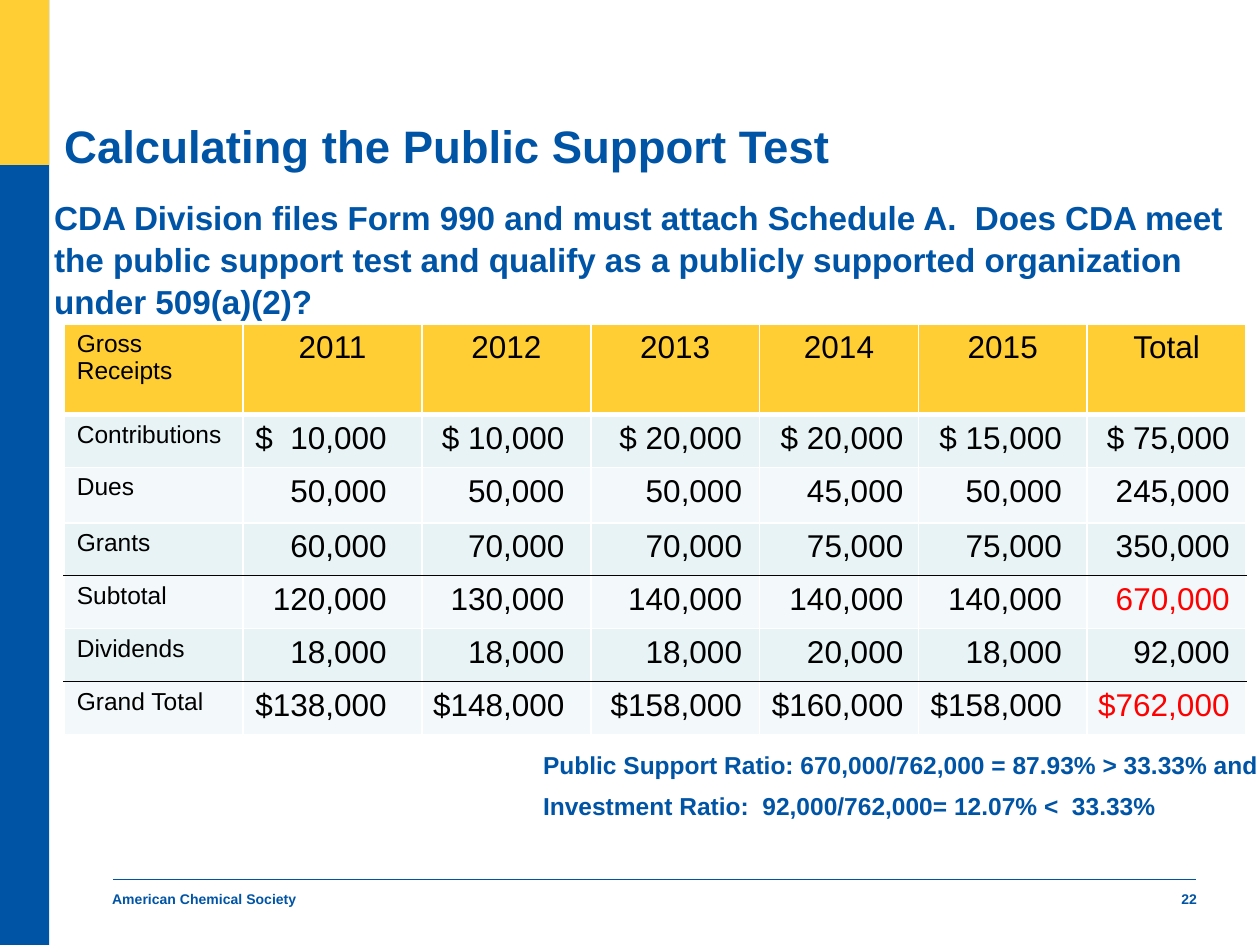
from lxml import etree
from pptx import Presentation
from pptx.dml.color import RGBColor
from pptx.enum import shapes, text
from pptx.oxml.ns import qn
from pptx.util import Inches, Pt

COLORS = {"blue": "0054A6", "gold": "FFCE34", "white": "FFFFFF", "black": "000000",
          "red": "FF0000", "band": "E7F3F4", "light": "F3F9FA"}
TITLE = "Calculating the Public Support Test"
QUESTION = ("CDA Division files Form 990 and must attach Schedule A.  Does CDA meet the public "
            "support test and qualify as a publicly supported organization under 509(a)(2)?")
RATIOS = ["Public Support Ratio: 670,000/762,000 = 87.93% > 33.33% and",
          "Investment Ratio:  92,000/762,000= 12.07% <  33.33%"]
ROWS = [
    ["Gross Receipts", "2011", "2012", "2013", "2014", "2015", "Total"],
    ["Contributions", "$  10,000", "$ 10,000", "$ 20,000", "$ 20,000", "$ 15,000", "$ 75,000"],
    ["Dues", "50,000", "50,000", "50,000", "45,000", "50,000", "245,000"],
    ["Grants", "60,000", "70,000", "70,000", "75,000", "75,000", "350,000"],
    ["Subtotal", "120,000", "130,000", "140,000", "140,000", "140,000", "670,000"],
    ["Dividends", "18,000", "18,000", "18,000", "20,000", "18,000", "92,000"],
    ["Grand Total", "$138,000", "$148,000", "$158,000", "$160,000", "$158,000", "$762,000"],
]
COL_WIDTHS = [1.42, 1.42, 1.34, 1.34, 1.26, 1.34, 1.26]
ROW_HEIGHTS = [0.72, 0.42, 0.44, 0.42, 0.42, 0.42, 0.42]
RIGHT_MARGINS = [0.1, 0.28, 0.21, 0.14, 0.12, 0.2, 0.13]
RULED_ROWS = {3, 5}
RED_CELLS = {(4, 6), (6, 6)}
BARS = [("blue", 7.5), ("gold", 1.31)]
FOOTERS = [("American Chemical Society", 0.89, 3.17, text.PP_ALIGN.LEFT),
           ("22", 7.56, 1.94, text.PP_ALIGN.RIGHT)]


def rgb(name):
    return RGBColor.from_string(COLORS[name])


def set_all(target, values):
    for name, value in values.items():
        setattr(target, name, value)


def write(p, words, size, color="blue", bold=True, **layout):
    r = p.add_run()
    r.text = words
    set_all(r.font, {"name": "Arial", "size": Pt(size), "bold": bold})
    r.font.color.rgb = rgb(color)
    set_all(p, layout)


def place(sp, left, top, width, height):
    set_all(sp, {"left": Inches(left), "top": Inches(top),
                 "width": Inches(width), "height": Inches(height)})
    tf = sp.text_frame
    set_all(tf, {"margin_left": 0, "margin_top": 0, "margin_right": 0, "margin_bottom": 0,
                 "word_wrap": True, "auto_size": text.MSO_AUTO_SIZE.NONE,
                 "vertical_anchor": text.MSO_ANCHOR.TOP})
    return tf


def plain_list(p, indent):
    pPr = p._p.get_or_add_pPr()
    pPr.set("marL", str(Inches(indent)))
    pPr.set("indent", "0")
    etree.SubElement(pPr, qn("a:buNone"))


def set_border(cell, sides):
    tcPr = cell._tc.get_or_add_tcPr()
    for i, (side, (color, width)) in enumerate(sides.items()):
        ln = etree.Element(qn("a:ln" + side), w=str(Pt(width)))
        fill = etree.SubElement(ln, qn("a:solidFill"))
        etree.SubElement(fill, qn("a:srgbClr"), val=COLORS[color])
        tcPr.insert(i, ln)


def bottom_line(row):
    if row == 0:
        return "white", 3
    return ("black" if row in RULED_ROWS else "white"), 1


def add_frame(s):
    for color, height in BARS:
        sp = s.shapes.add_shape(shapes.MSO_SHAPE.RECTANGLE, 0, 0, Inches(0.39), Inches(height))
        sp.shadow.inherit = False
        sp.fill.solid()
        sp.fill.fore_color.rgb = rgb(color)
        sp.line.fill.background()
    rule = s.shapes.add_connector(shapes.MSO_CONNECTOR.STRAIGHT, Inches(0.9), Inches(6.98),
                                  Inches(9.49), Inches(6.98))
    rule.line.color.rgb = rgb("blue")
    rule.line.width = Pt(0.75)
    etree.SubElement(rule._element.spPr, qn("a:effectLst"))
    for words, left, width, align in FOOTERS:
        tf = place(s.shapes.add_textbox(0, 0, 0, 0), left, 7.07, width, 0.31)
        write(tf.paragraphs[0], words, 8, alignment=align)


def add_copy(s):
    tf = place(s.shapes.title, 0.51, 0.35, 6.53, 1.03)
    tf.vertical_anchor = text.MSO_ANCHOR.BOTTOM
    write(tf.paragraphs[0], TITLE, 26, alignment=text.PP_ALIGN.LEFT, line_spacing=0.9)

    tf = place(s.placeholders[1], 0.43, 1.55, 9.57, 5.28)
    p = tf.paragraphs[0]
    plain_list(p, 0)
    write(p, QUESTION, 19, line_spacing=1.05, space_before=Pt(0), space_after=Pt(0))
    for words, gap in zip(RATIOS, (245, 7)):
        p = tf.add_paragraph()
        plain_list(p, 3.88)
        write(p, words, 14, space_before=Pt(gap), space_after=Pt(0))


def add_receipts(s):
    table = s.shapes.add_table(len(ROWS), len(COL_WIDTHS), Inches(0.51), Inches(2.57),
                               Inches(sum(COL_WIDTHS)), Inches(sum(ROW_HEIGHTS))).table
    for col, width in zip(table.columns, COL_WIDTHS):
        col.width = Inches(width)
    for row, height in zip(table.rows, ROW_HEIGHTS):
        row.height = Inches(height)
    for i, row in enumerate(ROWS):
        for j, words in enumerate(row):
            cell = table.cell(i, j)
            number = i > 0 and j > 0
            if j == 0:
                align = text.PP_ALIGN.LEFT
            else:
                align = text.PP_ALIGN.RIGHT if number else text.PP_ALIGN.CENTER
            set_all(cell, {"margin_left": Inches(0.05 if number else 0.1),
                           "margin_right": Inches(RIGHT_MARGINS[j] if number else 0.1),
                           "margin_top": Inches(0.05), "margin_bottom": Inches(0.05)})
            cell.fill.solid()
            cell.fill.fore_color.rgb = rgb("gold" if i == 0 else "band" if i % 2 else "light")
            set_border(cell, {"L": ("white", 1), "R": ("white", 1),
                              "T": bottom_line(i - 1) if i else ("white", 1),
                              "B": bottom_line(i)})
            write(cell.text_frame.paragraphs[0], words, 18 if j else 14,
                  "red" if (i, j) in RED_CELLS else "black", False, alignment=align)


def main():
    prs = Presentation()
    set_all(prs, {"slide_width": Inches(10), "slide_height": Inches(7.5)})
    s = prs.slides.add_slide(prs.slide_layouts[1])
    add_frame(s)
    add_copy(s)
    add_receipts(s)
    prs.save("out.pptx")


if __name__ == "__main__":
    main()
